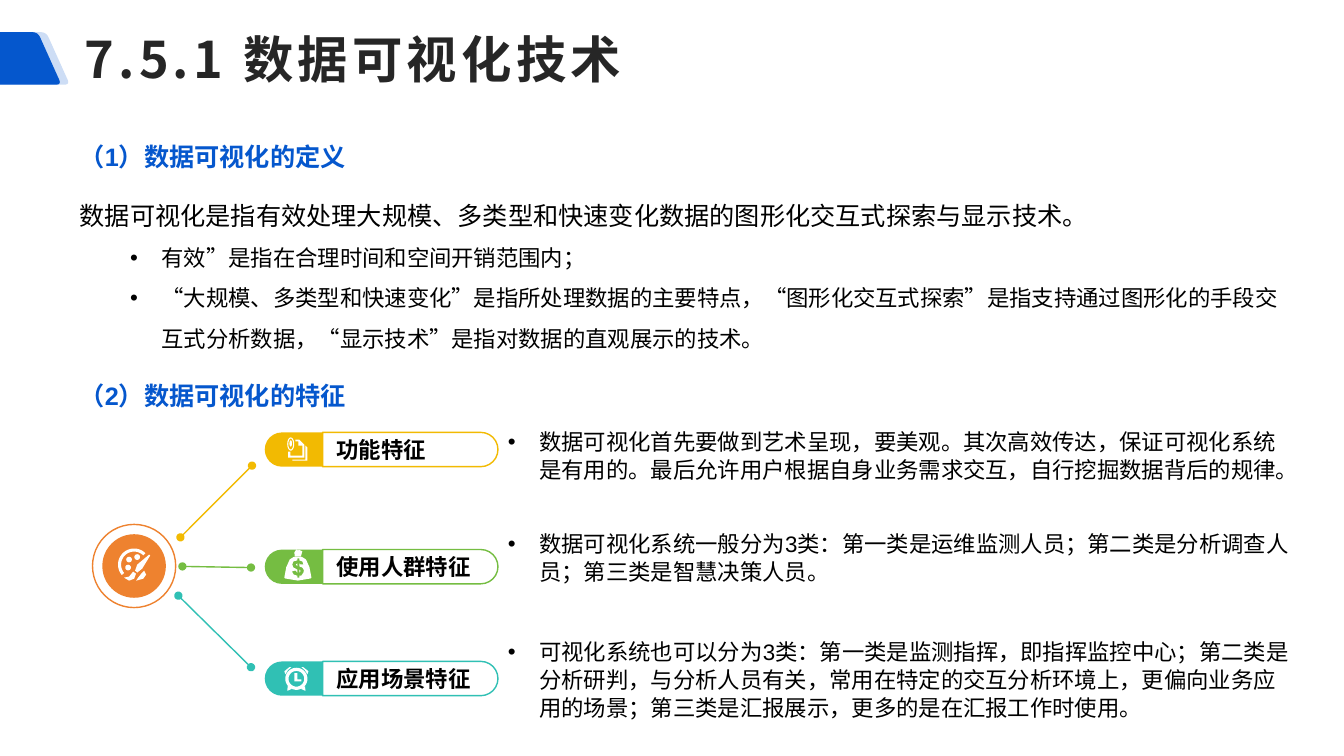
import math
from dataclasses import dataclass

import pptx
import pptx.dml.color
import pptx.enum.lang
import pptx.enum.shapes
import pptx.enum.text
import pptx.oxml
import pptx.oxml.ns
import pptx.util
from lxml import etree

Pt = pptx.util.Pt
qn = pptx.oxml.ns.qn
SHAPE = pptx.enum.shapes.MSO_SHAPE
ANCHOR = pptx.enum.text.MSO_ANCHOR


@dataclass(frozen=True)
class Theme:
    blue: str = "0557CD"
    dark: str = "262626"
    black: str = "000000"
    white: str = "FFFFFF"
    orange: str = "EE822F"
    yellow: str = "F2BA02"
    green: str = "75BD42"
    teal: str = "30C0B4"
    latin: str = "Arial"
    chinese: str = "Noto Sans CJK SC"
    title_size: int = 36
    lead_size: int = 18
    text_size: int = 16


THEME = Theme()


def color(value):
    return pptx.dml.color.RGBColor.from_string(value)


# Outlines, in points
def arc(x, y, radius_x, radius_y, start=0, end=360):
    angles = [math.radians(start + (end - start) * step / 36) for step in range(37)]
    return [(x + radius_x * math.cos(a), y + radius_y * math.sin(a)) for a in angles]


def mirror(points):
    return [(-x, y) for x, y in points]


def round_corners(corners, radius):
    points = []
    for index, (x, y) in enumerate(corners):
        ends = []
        for near_x, near_y in (corners[index - 1], corners[(index + 1) % len(corners)]):
            share = radius / math.hypot(near_x - x, near_y - y)
            ends.append((x + (near_x - x) * share, y + (near_y - y) * share))
        (ax, ay), (bx, by) = ends
        for step in range(9):
            t = step / 8
            u = 1 - t
            points.append((u * u * ax + 2 * u * t * x + t * t * bx,
                           u * u * ay + 2 * u * t * y + t * t * by))
    return points


PALETTE = [
    arc(0, -0.7, 11.5, 11.5, 140, 315) + arc(0, -0.7, 9.3, 9.3, 315, 140),
    arc(-4.3, 1.4, 2, 2), arc(-3.6, -4.3, 2, 2), arc(2.2, -6.1, 2, 2),
    [(5.8, 2.2), (11.5, -7.2), (10.8, -7.9), (2.2, -0.7), (0.7, 3.6), (2.2, 5)],
    [(-7.2, 8.6), (-3.6, 7.9), (-0.7, 4.3), (1.4, 5.8), (0, 9.4), (-3.6, 10.8)],
    [(5.8, 5), (2.9, 8.6), (1.4, 10.8), (6.5, 9.4), (8.6, 6.5), (7.2, 3.6)],
]
PAPERS = [
    [(-1.4, -6.8), (1.4, -6.8), (5, -3.2), (5, 6.1), (-6.5, 6.1), (-6.5, 1.8), (-5, 1.8),
     (-5, 4.7), (3.6, 4.7), (3.6, -2.5), (0.7, -2.5), (0.7, -5.4), (-1.4, -5.4)],
    [(5.8, -2.5), (7.2, -1.1), (7.2, 8.3), (-3.6, 8.3), (-3.6, 7.6), (5.8, 7.6)],
    arc(-4.7, -3.6, 2.5, 4.7), arc(-4.7, -3.6, 1.7, 3.9), arc(-4.7, -4, 0.9, 2.2),
]
MONEY_BAG = [
    [(-2.9, -5.4), (2.9, -5.4), (5.8, -3.6), (8.3, 2), (9.7, 9.4), (9, 10), (0, 11.5),
     (-9, 10), (-9.7, 9.4), (-8.3, 2), (-5.8, -3.6)],
    [(-2.2, -5.8), (2.2, -5.8), (3.2, -9.4), (1, -10.4), (0, -10), (-1, -10.8), (-2.5, -8.6)],
    [(4, 5.8), (2.5, 7.9), (1.1, 8), (1.1, 9.4), (-0.4, 9.4), (-0.4, 8), (-2.9, 7.2),
     (-4.3, 5), (-1.8, 4.3), (-0.4, 5.8), (-0.4, 3.6), (-3.2, 2.2), (-4, 0), (-3.2, -2.2),
     (-0.4, -2.9), (-0.4, -4.3), (1.1, -4.3), (1.1, -2.9), (3.2, -2.2), (4, 0), (1.8, 0),
     (1.1, -0.7), (1.1, 1.4), (3.2, 2.2), (4.3, 4)],
    [(1.1, 3.6), (1.1, 5.8), (1.8, 5), (1.8, 4.3)],
    [(-0.4, -0.7), (-1.4, 0), (-0.4, 1.2)],
]
CLOCK_EAR = [(-3.6, -8.3), (-5, -8.3), (-8.6, -5.4), (-7.9, -3.2), (-6.1, -6.1)]
CLOCK_FOOT = [(-6.2, 5.4), (-6.5, 8.6), (-3.6, 7.4)]
CLOCK = [
    arc(0, 0, 7.9, 7.9), arc(0, 0, 5.6, 5.6),
    [(3.6, 1.8), (-1.4, 1.8), (-1.4, -4), (0.7, -4), (0.7, 0.4), (3.6, 0.4)],
    CLOCK_EAR, mirror(CLOCK_EAR), CLOCK_FOOT, mirror(CLOCK_FOOT),
]


# Drawing
def paint(shape, fill=None, line=None):
    shape.shadow.inherit = False
    if fill:
        shape.fill.solid()
        shape.fill.fore_color.rgb = color(fill)
    else:
        shape.fill.background()
    if line:
        shape.line.color.rgb = color(line)
        shape.line.width = Pt(1)
    else:
        shape.line.fill.background()
    return shape


def add_outline(page, x, y, contours, fill):
    builder = None
    for contour in contours:
        points = [(Pt(x + dx), Pt(y + dy)) for dx, dy in contour]
        if builder is None:
            builder = page.shapes.build_freeform(*points[0])
        else:
            builder.move_to(*points[0])
        builder.add_line_segments(points[1:], close=True)
    return paint(builder.convert_to_shape(), fill)


def add_disc(page, x, y, size, **colors):
    disc = page.shapes.add_shape(SHAPE.OVAL, Pt(x - size / 2), Pt(y - size / 2), Pt(size), Pt(size))
    paint(disc, **colors)


def add_cap(page, left, middle, length, rotation, **colors):
    height = 24.5
    cap = page.shapes.add_shape(SHAPE.ROUND_2_SAME_RECTANGLE, Pt(left + (length - height) / 2),
                                Pt(middle - length / 2), Pt(height), Pt(length))
    cap.adjustments[0] = 0.5
    cap.rotation = rotation
    paint(cap, **colors)


def add_link(page, start, end, line):
    link = page.shapes.add_connector(pptx.enum.shapes.MSO_CONNECTOR.STRAIGHT,
                                     *(Pt(value) for value in start + end))
    link.line.color.rgb = color(line)
    link.line.width = Pt(1)
    for tag in ("a:headEnd", "a:tailEnd"):
        etree.SubElement(link.line._get_or_add_ln(), qn(tag), type="oval")
    etree.SubElement(link._element.spPr, qn("a:effectLst"))


# Text
def place(shape, left, top, width, height):
    shape.left, shape.top, shape.width, shape.height = Pt(left), Pt(top), Pt(width), Pt(height)
    shape.text_frame.word_wrap = True
    shape.text_frame.auto_size = pptx.enum.text.MSO_AUTO_SIZE.NONE
    return shape.text_frame


def format_para(para, size, fill=THEME.black, bold=False, latin=THEME.latin,
                margin=0, indent=0, bullet=False, spacing=1.0, after=0):
    properties = para._p.get_or_add_pPr()
    properties.set("marL", str(Pt(margin)))
    properties.set("indent", str(Pt(indent)))
    if bullet:
        etree.SubElement(properties, qn("a:buFont"), typeface=THEME.latin)
        etree.SubElement(properties, qn("a:buChar"), char="•")
    else:
        etree.SubElement(properties, qn("a:buNone"))
    para.alignment = pptx.enum.text.PP_ALIGN.LEFT
    para.line_spacing = spacing
    para.space_before, para.space_after = Pt(0), Pt(after)
    for span in para.runs:
        span.font.size, span.font.bold, span.font.name = Pt(size), bold, latin
        span.font.color.rgb = color(fill)
        span.font.language_id = pptx.enum.lang.MSO_LANGUAGE_ID.SIMPLIFIED_CHINESE
        etree.SubElement(span.font._element, qn("a:ea"), typeface=THEME.chinese)


def add_text(page, text, bounds, anchor=ANCHOR.TOP, inset=None, **style):
    frame = place(page.shapes.add_textbox(0, 0, 0, 0), *bounds)
    frame.vertical_anchor = anchor
    if inset is not None:
        frame.margin_left = frame.margin_right = frame.margin_top = frame.margin_bottom = Pt(inset)
    frame.text = text
    format_para(frame.paragraphs[0], THEME.text_size, **style)


def fill_title(page):
    frame = place(page.shapes.title, 53.3, 5.8, 906.5, 72)
    frame.vertical_anchor = ANCHOR.MIDDLE
    frame.text = "7.5.1 数据可视化技术"
    format_para(frame.paragraphs[0], THEME.title_size, THEME.dark, True, THEME.chinese)
    frame.paragraphs[0].runs[0].font._element.set("spc", "300")


def fill_body(page):
    heading = dict(size=THEME.lead_size, fill=THEME.blue, bold=True, indent=36, after=10)
    lead = dict(size=THEME.lead_size, indent=36)
    item = dict(size=THEME.text_size, margin=94.5, indent=-22.5, bullet=True)
    content = [
        ("（1）数据可视化的定义", heading),
        ("数据可视化是指有效处理大规模、多类型和快速变化数据的图形化交互式探索与显示技术。", lead),
        ("有效”是指在合理时间和空间开销范围内；", item),
        ("“大规模、多类型和快速变化”是指所处理数据的主要特点，“图形化交互式探索”是指支持通过图形化的手段交互式分析数据，“显示技术”是指对数据的直观展示的技术。", item | {"after": 10}),
        ("（2）数据可视化的特征", heading),
    ]
    frame = place(page.placeholders[1], 13.7, 86.4, 918, 215.3)
    frame.vertical_anchor = ANCHOR.TOP
    frame.text = "\n".join(text for text, _ in content)
    for para, (_, style) in zip(frame.paragraphs, content):
        format_para(para, spacing=1.5, **style)


def add_feature(page, label, detail, fill, icon, icon_at, middle, top, height, start, end):
    add_cap(page, 230.4, middle, 125.3, 90, line=fill)
    add_cap(page, 189.1, middle, 41.3, 270, fill=fill)
    add_outline(page, *icon_at, icon, THEME.white)
    add_link(page, start, end, fill)
    add_text(page, label, (240.5, middle - 12, 115, 24), ANCHOR.MIDDLE, 0,
             bold=True, latin=THEME.chinese)
    add_text(page, detail, (355.7, top, 576, height),
             margin=22.5, indent=-22.5, bullet=True, spacing=Pt(20))


def main():
    deck = pptx.Presentation()
    deck.slide_width, deck.slide_height = Pt(960), Pt(540)
    page = deck.slides.add_slide(deck.slide_layouts[1])

    # Title with its slanted tab
    tab = round_corners([(-20, 60.5), (-3.1, 23), (27, 23), (43.9, 60.5)], 4)
    shade = add_outline(page, 6, 0, [tab], THEME.blue)
    etree.SubElement(shade.fill._xPr.find(qn("a:solidFill"))[0], qn("a:alpha"), val="20000")
    add_outline(page, 0, 0, [tab], THEME.blue)
    fill_title(page)
    fill_body(page)

    # Hub and the three features
    add_disc(page, 95.8, 404.3, 59.4, line=THEME.orange)
    add_disc(page, 95.8, 404.3, 45.4, fill=THEME.orange)
    add_outline(page, 95.8, 404, PALETTE, THEME.white)
    add_feature(page, "功能特征", "数据可视化首先要做到艺术呈现，要美观。其次高效传达，保证可视化系统是有用的。最后允许用户根据自身业务需求交互，自行挖掘数据背后的规律。",
                THEME.yellow, PAPERS, (212.4, 320.8), 321.1, 301.7, 47.5, (180, 332.6), (128.9, 383.8))
    add_feature(page, "使用人群特征", "数据可视化系统一般分为3类：第一类是运维监测人员；第二类是分析调查人员；第三类是智慧决策人员。",
                THEME.green, MONEY_BAG, (212.8, 403.2), 404.8, 374.4, 62, (179.3, 405.4), (130.3, 404.6))
    add_feature(page, "应用场景特征", "可视化系统也可以分为3类：第一类是监测指挥，即指挥监控中心；第二类是分析研判，与分析人员有关，常用在特定的交互分析环境上，更偏向业务应用的场景；第三类是汇报展示，更多的是在汇报工作时使用。",
                THEME.teal, CLOCK, (211.7, 484.9), 484.7, 451.4, 67.7, (127.4, 425.5), (179.3, 476.6))
    deck.save("out.pptx")


if __name__ == "__main__":
    main()
